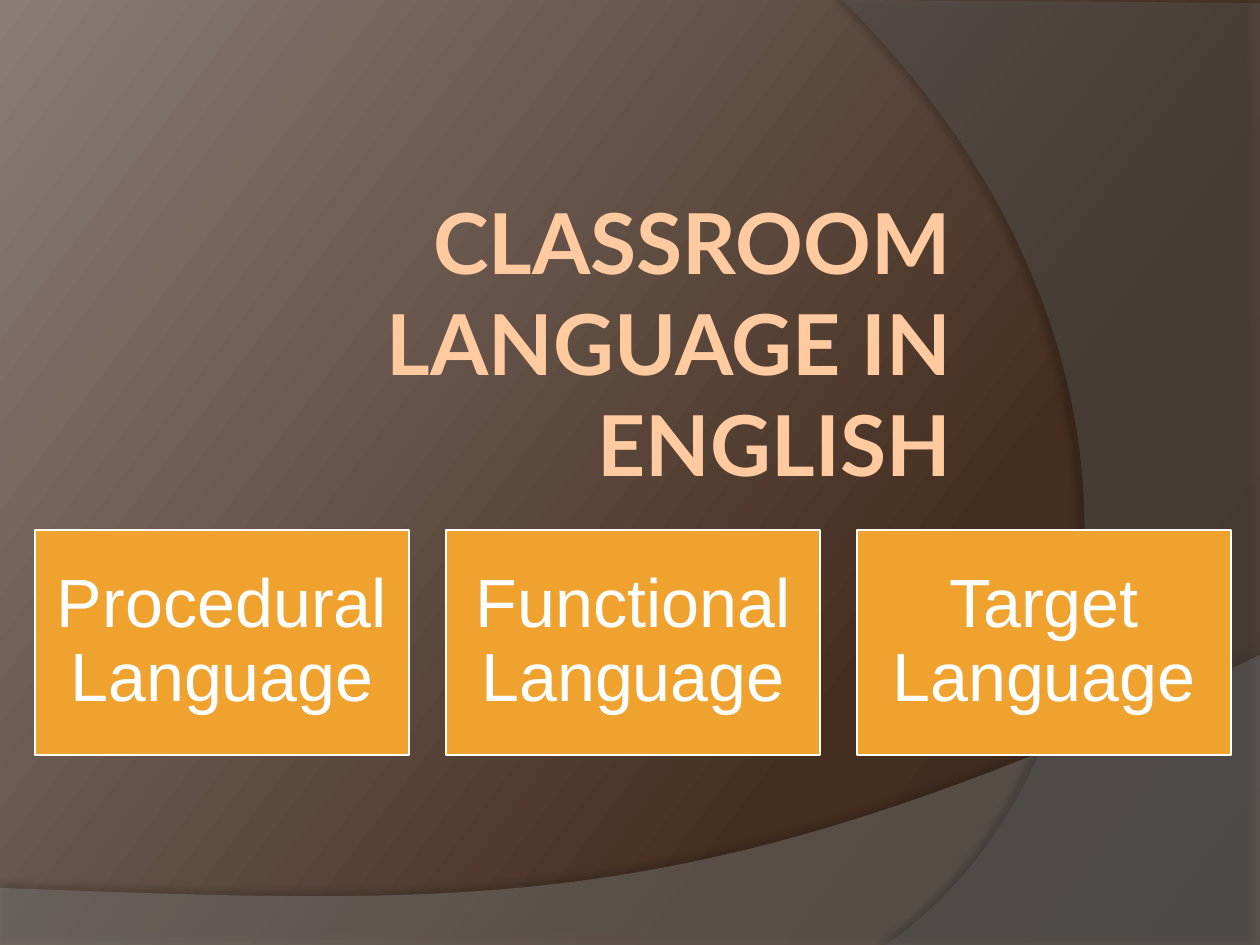
"""Build a title slide with three boxes for kinds of classroom language."""
from copy import deepcopy
from dataclasses import dataclass

from lxml import etree
from pptx import Presentation
from pptx import util as u
from pptx.dml.color import RGBColor
from pptx.enum import shapes, text
from pptx.oxml import ns

PX = u.Inches(1) / 126


def emu(px):
    return round(px * PX)


@dataclass(frozen=True)
class Theme:
    backdrop: tuple = ((0, "39261B"), (0.3, "442E20"), (1, "8A7C76"))
    backdrop_angle: int = 143
    lower_wave: str = "7F7F7F"
    right_wave: str = "5E5E5E"
    shadow: str = "000000"
    title: str = "FFCA9F"
    box: str = "F0A22E"
    light: str = "FFFFFF"
    title_font: str = "Lato"
    box_font: str = "Arial"
    title_size: int = 48
    box_size: int = 39


def rgb(value):
    return RGBColor.from_string(value)


def write(sp, content, *, font, size, color, align, anchor, inset, bold=False, spacing=None):
    tf = sp.text_frame
    tf.word_wrap = True
    tf.vertical_anchor = anchor
    tf.margin_left = tf.margin_right = tf.margin_top = tf.margin_bottom = emu(inset)
    p = tf.paragraphs[0]
    p.alignment = align
    if spacing:
        p.line_spacing = spacing
    r = p.add_run()
    r.text = content
    r.font.name, r.font.size, r.font.bold = font, u.Pt(size), bold
    r.font.color.rgb = rgb(color)


class Deck:
    def __init__(self, theme, width, height):
        self.theme = theme
        self.prs = Presentation()
        self.prs.slide_width, self.prs.slide_height = emu(width), emu(height)
        self.s = self.prs.slides.add_slide(self.prs.slide_layouts[6])

    def backdrop(self):
        fill = self.s.background.fill
        fill.gradient()
        fill.gradient_angle = self.theme.backdrop_angle
        first = next(self.s.element.iter(ns.qn("a:gs")))
        first.addnext(deepcopy(first))
        for stop, (position, color) in zip(fill.gradient_stops, self.theme.backdrop):
            stop.position = position
            stop.color.rgb = rgb(color)

    def wave(self, corners, curve, color, opacity, shadow_opacity, distance, direction):
        points = [(emu(x), emu(y)) for x, y in corners + curve]
        builder = self.s.shapes.build_freeform(*points[0], scale=1.0)
        builder.add_line_segments(points[1:], close=True)
        sp = builder.convert_to_shape()
        self.bend(sp)
        sp.fill.solid()
        sp.fill.fore_color.rgb = rgb(color)
        sp.line.fill.background()
        fill_color = next(sp.element.spPr.iter(ns.qn("a:srgbClr")))
        self.alpha(fill_color, opacity)
        sp.shadow.inherit = False
        effects = sp.element.spPr.find(ns.qn("a:effectLst"))
        shadow = etree.SubElement(effects, ns.qn("a:outerShdw"), blurRad=str(u.Pt(4)),
                                  dist=str(u.Pt(distance)), dir=str(direction * 60000),
                                  algn="ctr", rotWithShape="0")
        shade = etree.SubElement(shadow, ns.qn("a:srgbClr"), val=self.theme.shadow)
        self.alpha(shade, shadow_opacity)

    @staticmethod
    def bend(sp):
        lines = list(sp.element.spPr.iter(ns.qn("a:lnTo")))[-3:]
        curve = etree.Element(ns.qn("a:cubicBezTo"))
        lines[0].addprevious(curve)
        for line in lines:
            curve.append(line[0])
            line.getparent().remove(line)

    @staticmethod
    def alpha(color, percent):
        etree.SubElement(color, ns.qn("a:alpha"), val=str(percent * 1000))

    def title(self, content, x, y, w, h):
        sp = self.s.shapes.add_textbox(*map(emu, (x, y, w, h)))
        write(sp, content, font=self.theme.title_font, size=self.theme.title_size,
              color=self.theme.title, align=text.PP_ALIGN.RIGHT,
              anchor=text.MSO_ANCHOR.TOP, inset=6, bold=True)

    def box(self, content, x, y, w, h):
        sp = self.s.shapes.add_shape(shapes.MSO_SHAPE.RECTANGLE, *map(emu, (x, y, w, h)))
        sp.shadow.inherit = False
        sp.fill.solid()
        sp.fill.fore_color.rgb = rgb(self.theme.box)
        sp.line.color.rgb = rgb(self.theme.light)
        sp.line.width = u.Pt(1.5)
        write(sp, content, font=self.theme.box_font, size=self.theme.box_size,
              color=self.theme.light, align=text.PP_ALIGN.CENTER,
              anchor=text.MSO_ANCHOR.MIDDLE, inset=20, spacing=0.9)


def main():
    theme = Theme()
    deck = Deck(theme, 1260, 945)
    deck.backdrop()
    deck.wave([(0, 888), (0, 946), (1260, 946)],
              [(1260, 655), (704, 919), (493, 906), (0, 888)],
              theme.lower_wave, 45, 35, 3.5, 270)
    deck.wave([(1260, 3), (1260, 945)],
              [(886, 945), (1123, 780), (1193, 347), (842, 0)],
              theme.right_wave, 40, 45, 4, 180)
    deck.title("CLASSROOM LANGUAGE IN ENGLISH", 64, 185, 893, 318)
    for i, kind in enumerate(("Procedural", "Functional", "Target")):
        deck.box(f"{kind} Language", 35 + i * 411, 530, 374, 225)
    deck.prs.save("out.pptx")


if __name__ == "__main__":
    main()
